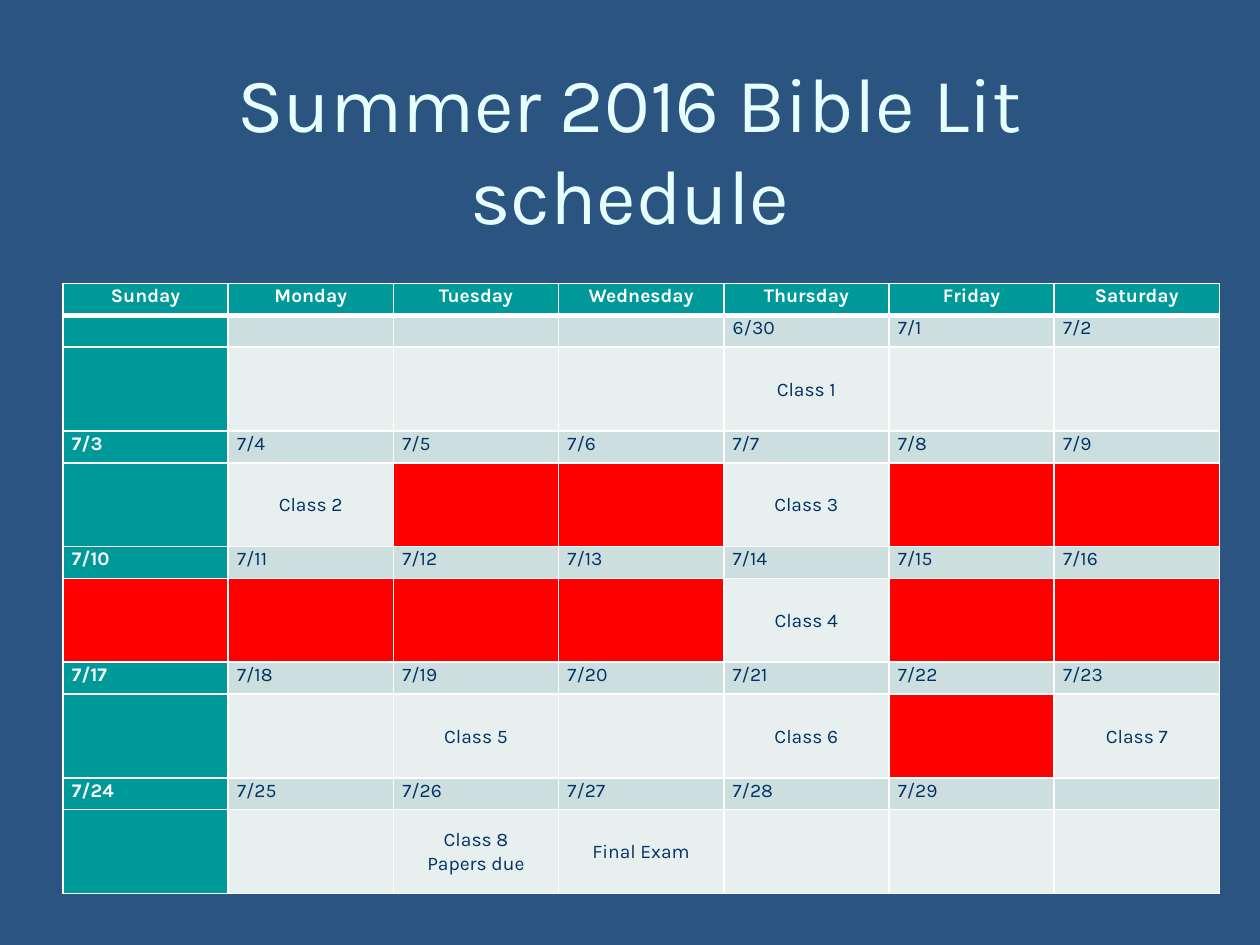
from lxml import etree
from pptx import Presentation
from pptx.dml.color import RGBColor
from pptx.enum.text import MSO_ANCHOR, MSO_AUTO_SIZE, PP_ALIGN
from pptx.oxml.ns import qn
from pptx.util import Cm, Pt

CENTER, LEFT = PP_ALIGN.CENTER, PP_ALIGN.LEFT
MIDDLE, TOP = MSO_ANCHOR.MIDDLE, MSO_ANCHOR.TOP
FONT = "Karla"
SIZE = 11
C = {"bg": "2B5481", "title": "E5FFFF", "teal": "009999", "date": "CCDEDE",
     "day": "E7EFEF", "blocked": "FF0000", "text": "003366", "white": "FFFFFF"}

# Content: each week is a row of dates and a row of events; X is a blocked day
TITLE = "Summer 2016 Bible Lit schedule"
X = "blocked"
DAYS = ["Sunday", "Monday", "Tuesday", "Wednesday", "Thursday", "Friday", "Saturday"]
WEEKS = [
    (["", "", "", "", "6/30", "7/1", "7/2"],
     ["", "", "", "", "Class 1", "", ""]),
    (["7/3", "7/4", "7/5", "7/6", "7/7", "7/8", "7/9"],
     ["", "Class 2", X, X, "Class 3", X, X]),
    (["7/10", "7/11", "7/12", "7/13", "7/14", "7/15", "7/16"],
     [X, X, X, X, "Class 4", X, X]),
    (["7/17", "7/18", "7/19", "7/20", "7/21", "7/22", "7/23"],
     ["", "", "Class 5", "", "Class 6", X, "Class 7"]),
    (["7/24", "7/25", "7/26", "7/27", "7/28", "7/29", ""],
     ["", "", "Class 8\nPapers due", "Final Exam", "", "", ""]),
]
COL_W, DATE_H, EVENT_H = Cm(3.33), Cm(0.64), Cm(1.69)


def rgb(name):
    return RGBColor.from_string(C[name])


def add_run(p, text, size, color, bold=False):
    r = p.add_run()
    r.text = text
    r.font.name, r.font.size, r.font.bold = FONT, Pt(size), bold
    r.font.color.rgb = rgb(color)


def set_borders(cell, top, bottom):
    tcPr = cell._tc.get_or_add_tcPr()
    for side, width in (("L", 1), ("R", 1), ("T", top), ("B", bottom)):
        ln = etree.SubElement(tcPr, qn(f"a:ln{side}"), w=str(Pt(width)))
        fill = etree.SubElement(ln, qn("a:solidFill"))
        etree.SubElement(fill, qn("a:srgbClr"), val=C["white"])


def fill_cell(cell, text, fill, align, anchor, top=1, bottom=1):
    set_borders(cell, top, bottom)
    cell.fill.solid()
    cell.fill.fore_color.rgb = rgb(fill)
    cell.margin_left = cell.margin_right = Cm(0.18)
    cell.margin_top = cell.margin_bottom = 0
    cell.vertical_anchor = anchor
    on_teal = fill == "teal"
    tf = cell.text_frame
    for i, line in enumerate(text.split("\n")):
        p = tf.add_paragraph() if i else tf.paragraphs[0]
        p.alignment, p.line_spacing = align, 1.07
        if line:
            add_run(p, line, SIZE, "white" if on_teal else "text", on_teal)
        else:  # keeps an empty cell from stretching its row
            etree.SubElement(p._p, qn("a:endParaRPr"), sz=str(SIZE * 100))


prs = Presentation()
prs.slide_width, prs.slide_height = Cm(25.4), Cm(19.05)
s = prs.slides.add_slide(prs.slide_layouts[5])
s.background.fill.solid()
s.background.fill.fore_color.rgb = rgb("bg")

# Title
title = s.shapes.title
title.left, title.top, title.width, title.height = Cm(1.27), Cm(1.07), Cm(22.86), Cm(3.81)
tf = title.text_frame
tf.word_wrap, tf.auto_size, tf.vertical_anchor = True, MSO_AUTO_SIZE.NONE, MIDDLE
p = tf.paragraphs[0]
p.alignment = CENTER
add_run(p, TITLE, 44, "title")

# Calendar table
heights = [DATE_H] + [DATE_H, EVENT_H] * len(WEEKS)
table = s.shapes.add_table(len(heights), len(DAYS), Cm(1.27), Cm(5.72),
                           COL_W * len(DAYS), sum(heights)).table
table.horz_banding = False
for column in table.columns:
    column.width = COL_W
for row, height in zip(table.rows, heights):
    row.height = height

for col, day in enumerate(DAYS):
    fill_cell(table.cell(0, col), day, "teal", CENTER, TOP, bottom=3)

for week, (dates, events) in enumerate(WEEKS):
    row = 1 + 2 * week
    for col, (date, event) in enumerate(zip(dates, events)):
        sunday = col == 0
        fill_cell(table.cell(row, col), date, "teal" if sunday else "date",
                  LEFT, TOP, top=1 if week else 3)
        blocked = event == X
        fill = "blocked" if blocked else "teal" if sunday else "day"
        fill_cell(table.cell(row + 1, col), "" if blocked else event,
                  fill, CENTER, MIDDLE)

prs.save("out.pptx")
